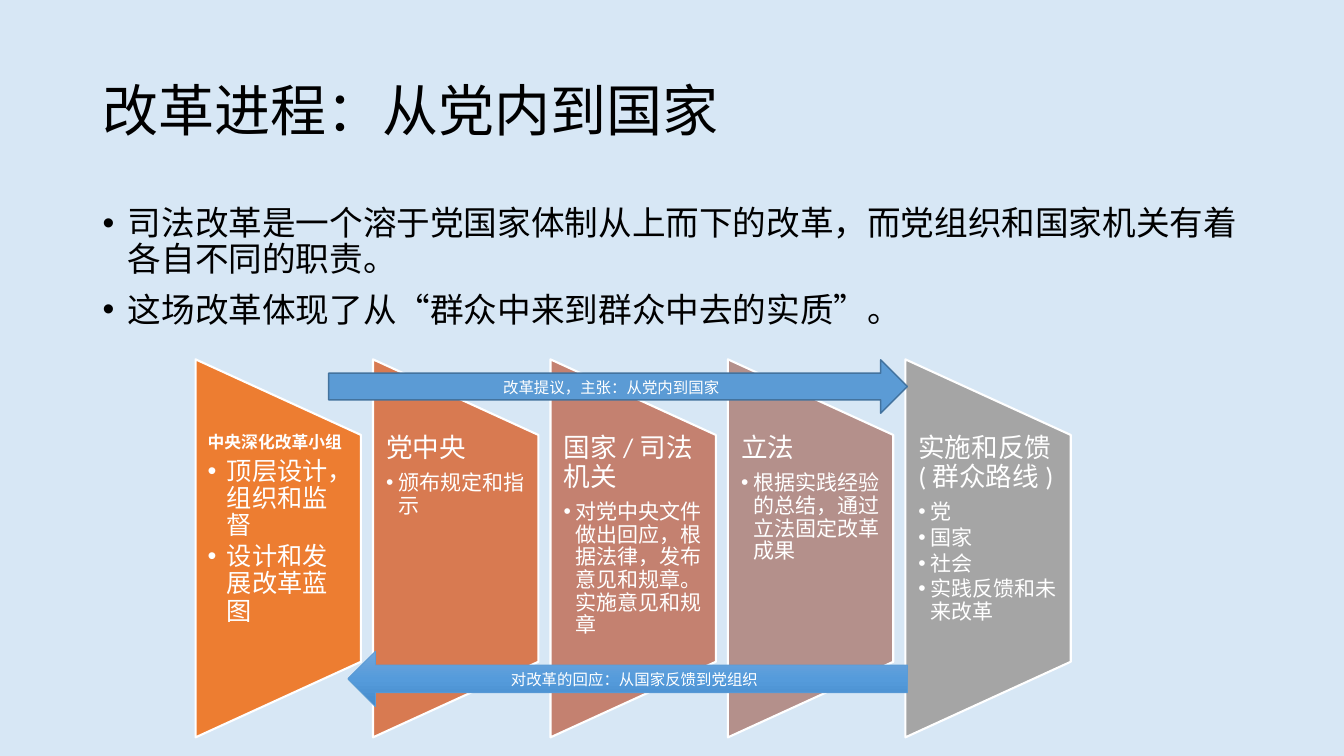
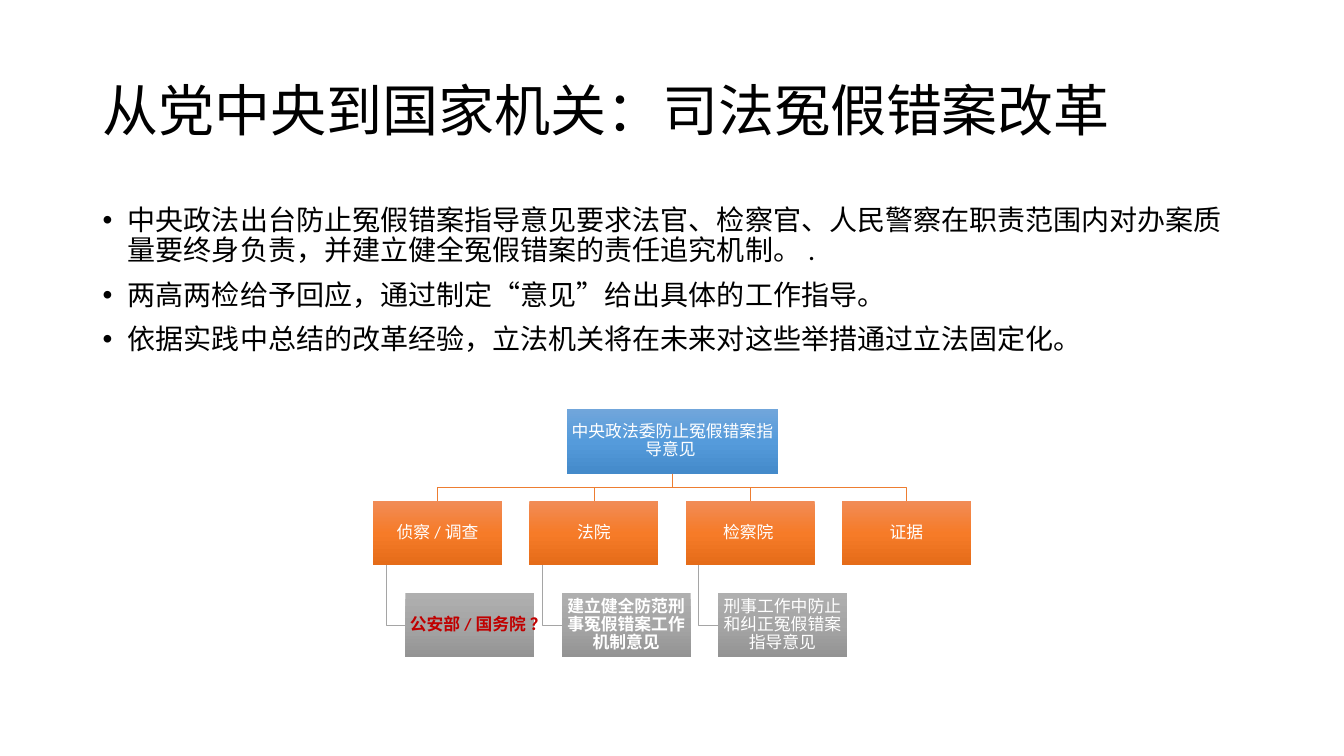
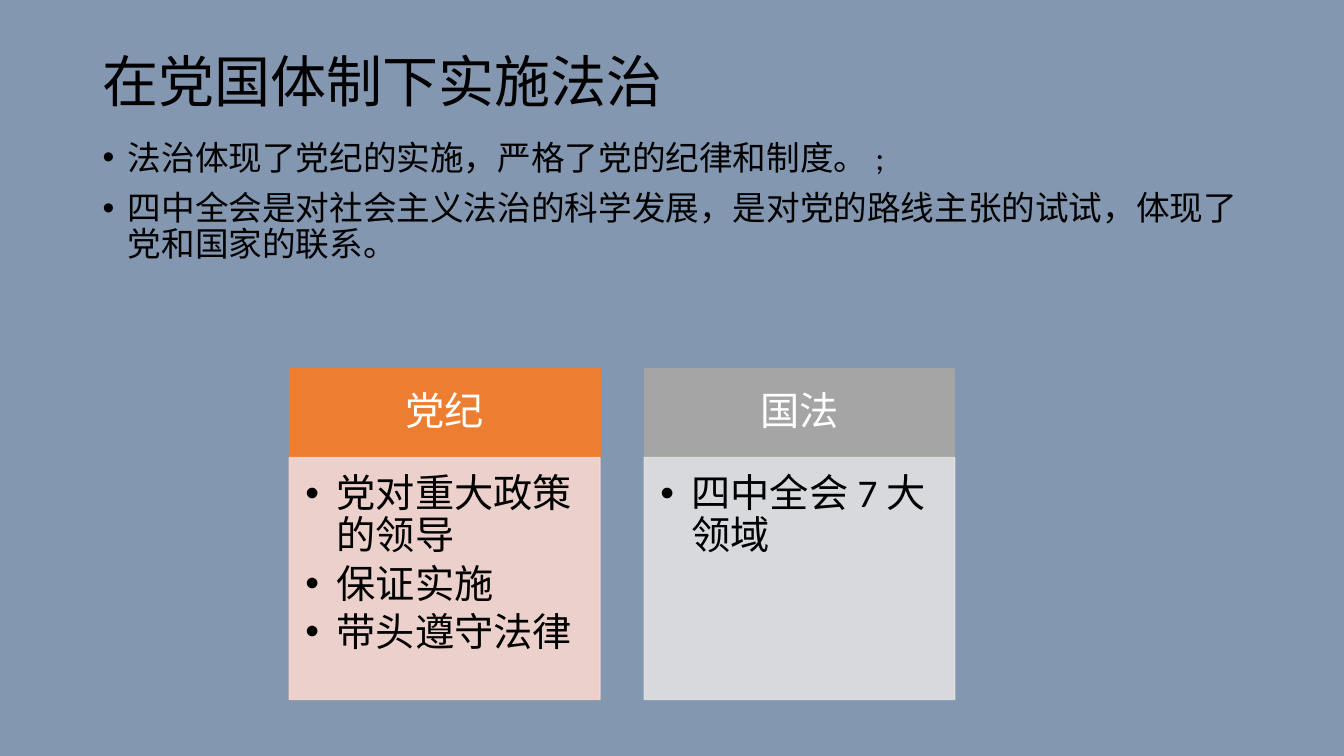
"""Build three slides on judicial reform, from Party bodies to state organs."""
from copy import deepcopy
from dataclasses import dataclass
from typing import Any, Optional, Union

from lxml import etree
from pptx import Presentation
from pptx.dml.color import RGBColor
from pptx.enum.lang import MSO_LANGUAGE_ID
from pptx.enum.shapes import MSO_SHAPE
from pptx.enum.text import MSO_ANCHOR, PP_ALIGN
from pptx.oxml.ns import qn
from pptx.util import Inches, Pt

RECT = MSO_SHAPE.RECTANGLE
TRAPEZOID = MSO_SHAPE.FLOWCHART_MANUAL_OPERATION
RIGHT_ARROW = MSO_SHAPE.RIGHT_ARROW
LEFT_ARROW = MSO_SHAPE.LEFT_ARROW
TOP, MIDDLE = MSO_ANCHOR.TOP, MSO_ANCHOR.MIDDLE
LEFT, CENTER = PP_ALIGN.LEFT, PP_ALIGN.CENTER
CHINESE = MSO_LANGUAGE_ID.SIMPLIFIED_CHINESE

Fill = Union[str, tuple[str, str, str]]
Box = tuple[float, float, float, float]


@dataclass(frozen=True)
class Theme:
    font: str = "Calibri"
    black: str = "000000"
    white: str = "FFFFFF"
    red: str = "C00000"
    sky: str = "D7E7F5"
    slate: str = "8497B0"
    blue: str = "5B9BD5"
    navy: str = "43739E"
    orange: str = "ED7D31"
    gray: str = "A5A5A5"
    peach: str = "F8D7CE"
    silver: str = "E1E1E1"
    stages: tuple[str, ...] = ("ED7D31", "D87A51", "C48170", "B4908B", "A5A5A5")
    blue_shade: Fill = ("71A6DB", "559BDB", "448ACA")
    orange_shade: Fill = ("F18C57", "F67B28", "E56C19")
    gray_shade: Fill = ("AFAFAF", "A5A5A5", "939393")
    title_size: float = 40
    body_size: float = 24
    dense_size: float = 20
    column_size: float = 28
    stage_size: float = 19
    duty_size: float = 15
    lead_size: float = 12
    lead_duty_size: float = 18
    node_size: float = 12
    arrow_size: float = 11


T = Theme()


@dataclass(frozen=True)
class Para:
    text: str
    size: float
    color: str = T.white
    bold: bool = False
    align: Any = LEFT
    indent: float = 0
    spacing: float = 0.9
    before: float = 0
    after: float = 0


@dataclass(frozen=True)
class Stage:
    heading: str
    duties: tuple[str, ...]
    size: float = T.stage_size
    duty_size: float = T.duty_size
    bold: bool = False
    indent: float = 0.12
    inset: float = 0.13


@dataclass(frozen=True)
class Branch:
    name: str
    leaf: str = ""
    color: str = T.white
    bold: bool = False


@dataclass(frozen=True)
class Column:
    heading: str
    points: tuple[str, ...]
    color: str
    tint: str


def assign(target: Any, values: dict[str, Any]) -> None:
    """Set every named attribute on the target."""
    for name, value in values.items():
        setattr(target, name, value)


def inches(values: tuple[float, ...]) -> list[int]:
    """Convert numbers to lengths in inches."""
    return [Inches(value) for value in values]


def add_bullet(paragraph: Any, indent: float) -> None:
    """Give a paragraph a round bullet with a hanging indent."""
    props = paragraph._p.get_or_add_pPr()
    props.set("marL", str(Inches(indent)))
    props.set("indent", str(-Inches(indent)))
    etree.SubElement(props, qn("a:buFont")).set("typeface", "Arial")
    etree.SubElement(props, qn("a:buChar")).set("char", "•")


def write(shape: Any, paras: list[Para], anchor: Any = TOP,
          insets: Box = (0.1, 0.05, 0.1, 0.05)) -> None:
    """Fill a shape with formatted paragraphs."""
    frame = shape.text_frame
    sides = ("margin_left", "margin_top", "margin_right", "margin_bottom")
    assign(frame, {"word_wrap": True, "vertical_anchor": anchor,
                   **dict(zip(sides, inches(insets)))})
    for index, para in enumerate(paras):
        paragraph = frame.add_paragraph() if index else frame.paragraphs[0]
        if para.indent:
            add_bullet(paragraph, para.indent)
        assign(paragraph, {"alignment": para.align, "line_spacing": para.spacing,
                           "space_before": Pt(para.before if index else 0),
                           "space_after": Pt(para.after)})
        run = paragraph.add_run()
        run.text = para.text
        assign(run.font, {"name": T.font, "size": Pt(para.size), "bold": para.bold,
                          "language_id": CHINESE})
        run.font.color.rgb = RGBColor.from_string(para.color)


def add_text(slide: Any, box: Box, paras: list[Para], anchor: Any = TOP,
             insets: Box = (0.1, 0.05, 0.1, 0.05)) -> None:
    """Add a wrapped text box."""
    write(slide.shapes.add_textbox(*inches(box)), paras, anchor, insets)


def set_line(shape: Any, color: Optional[str], width: float) -> None:
    """Outline a shape, or leave it without a line."""
    if color is None:
        shape.line.fill.background()
        return
    shape.line.color.rgb = RGBColor.from_string(color)
    shape.line.width = Pt(width)


def set_fill(shape: Any, fill: Fill) -> None:
    """Fill a shape with one colour or a vertical three-stop gradient."""
    if isinstance(fill, str):
        shape.fill.solid()
        shape.fill.fore_color.rgb = RGBColor.from_string(fill)
        return
    shape.fill.gradient()
    shape.fill.gradient_angle = 270
    stops = shape.element.spPr.find(".//" + qn("a:gsLst"))
    stops.insert(1, deepcopy(stops[0]))
    for stop, position, color in zip(shape.fill.gradient_stops, (0, 0.5, 1), fill):
        stop.position = position
        stop.color.rgb = RGBColor.from_string(color)


def add_block(slide: Any, kind: Any, box: Box, fill: Fill,
              line: Optional[str] = None, width: float = 1) -> Any:
    """Add a flat preset shape."""
    shape = slide.shapes.add_shape(kind, *inches(box))
    shape.shadow.inherit = False
    set_fill(shape, fill)
    set_line(shape, line, width)
    return shape


def set_opacity(shape: Any, percent: int) -> None:
    """Make the fill and line of a shape partly transparent."""
    for color in shape.element.spPr.iter(qn("a:srgbClr")):
        etree.SubElement(color, qn("a:alpha")).set("val", str(percent * 1000))


def add_link(slide: Any, points: list[tuple[float, float]], color: str) -> None:
    """Draw an open bent line through the points."""
    start, *rest = [tuple(inches(point)) for point in points]
    builder = slide.shapes.build_freeform(*start)
    builder.add_line_segments(rest, close=False)
    link = builder.convert_to_shape()
    link.shadow.inherit = False
    link.fill.background()
    set_line(link, color, 0.5)


def add_slide(deck: Any, background: str, title: str, points: list[str],
              size: float = T.body_size, title_top: float = 0.4,
              body_top: float = 2, body_height: float = 4.76) -> Any:
    """Add a slide with its background, title and bulleted body."""
    slide = deck.slides.add_slide(deck.slide_layouts[6])
    slide.background.fill.solid()
    slide.background.fill.fore_color.rgb = RGBColor.from_string(background)
    add_text(slide, (0.92, title_top, 11.5, 1.45),
             [Para(title, T.title_size, T.black)], MIDDLE)
    add_text(slide, (0.92, body_top, 11.5, body_height),
             [Para(point, size, T.black, indent=0.25, before=10) for point in points])
    return slide


def add_stage(slide: Any, left: float, stage: Stage, color: str) -> None:
    """Draw one step of the reform process."""
    width, length = 1.64, 3.75
    panel = add_block(slide, TRAPEZOID, (left + (width - length) / 2, 4.62, length, width),
                      color, T.white, 1.5)
    panel.rotation = 270
    heading = Para(stage.heading, stage.size, bold=stage.bold, after=stage.size * 0.35)
    duties = [Para(duty, stage.duty_size, indent=stage.indent, after=stage.duty_size * 0.15)
              for duty in stage.duties]
    add_text(slide, (left, 4.31, width, 2.25), [heading, *duties],
             insets=(stage.inset, 0, stage.inset, 0))


def build_process(deck: Any) -> None:
    """Build the slide on the reform process."""
    slide = add_slide(deck, T.sky, "改革进程：从党内到国家", [
        "司法改革是一个溶于党国家体制从上而下的改革，而党组织和国家机关有着各自不同的职责。",
        "这场改革体现了从“群众中来到群众中去的实质”。",
    ])
    stages = [
        Stage("中央深化改革小组", ("顶层设计，组织和监督", "设计和发展改革蓝图"),
              T.lead_size, T.lead_duty_size, True, 0.19, 0.12),
        Stage("党中央", ("颁布规定和指示",)),
        Stage("国家/司法机关", ("对党中央文件做出回应，根据法律，发布意见和规章。实施意见和规章",)),
        Stage("立法", ("根据实践经验的总结，通过立法固定改革成果",)),
        Stage("实施和反馈(群众路线)", ("党", "国家", "社会", "实践反馈和未来改革")),
    ]
    for index, (stage, color) in enumerate(zip(stages, T.stages)):
        add_stage(slide, 1.94 + 1.76 * index, stage, color)
    proposal = add_block(slide, RIGHT_ARROW, (3.26, 3.57, 5.74, 0.53), T.blue, T.navy)
    response = add_block(slide, LEFT_ARROW, (3.45, 6.46, 5.55, 0.55), T.blue_shade, T.blue, 0.5)
    for arrow, label in ((proposal, "改革提议，主张：从党内到国家"),
                         (response, "对改革的回应：从国家反馈到党组织")):
        write(arrow, [Para(label, T.arrow_size, align=CENTER, spacing=1.07)], MIDDLE)


def add_node(slide: Any, box: Box, fill: Fill, text: str,
             color: str = T.white, bold: bool = False) -> None:
    """Draw one box of the organisation tree."""
    write(add_block(slide, RECT, box, fill),
          [Para(text, T.node_size, color, bold, CENTER)], MIDDLE, (0.01,) * 4)


def build_tree(deck: Any) -> None:
    """Build the slide on wrongful-case reform."""
    slide = add_slide(deck, T.white, "从党中央到国家机关：司法冤假错案改革", [
        "中央政法出台防止冤假错案指导意见要求法官、检察官、人民警察在职责范围内对办案质量要终身负责，并建立健全冤假错案的责任追究机制。.",
        "两高两检给予回应，通过制定“意见”给出具体的工作指导。",
        "依据实践中总结的改革经验，立法机关将在未来对这些举措通过立法固定化。",
    ], T.dense_size)
    branches = [
        Branch("侦察/调查", "公安部/国务院 ？", T.red, True),
        Branch("法院", "建立健全防范刑事冤假错案工作机制意见", bold=True),
        Branch("检察院 ", "刑事工作中防止和纠正冤假错案指导意见"),
        Branch("证据"),
    ]
    width, height, trunk = 1.28, 0.64, 6.67
    root_top, branch_top, leaf_top = 4.06, 4.97, 5.88
    root_bottom, fork = root_top + height, 4.84
    add_node(slide, (5.62, root_top, 2.1, height), T.blue_shade, "中央政法委防止冤假错案指导意见 ")
    for index, branch in enumerate(branches):
        left = 3.7 + 1.55 * index
        center, stem, leaf_left = left + width / 2, left + 0.13, left + 0.32
        leaf_middle = leaf_top + height / 2
        add_link(slide, [(trunk, root_bottom), (trunk, fork), (center, fork),
                         (center, branch_top)], T.orange)
        add_node(slide, (left, branch_top, width, height), T.orange_shade, branch.name)
        if branch.leaf:
            add_link(slide, [(stem, branch_top + height), (stem, leaf_middle),
                             (leaf_left, leaf_middle)], T.gray)
            add_node(slide, (leaf_left, leaf_top, width, height), T.gray_shade,
                     branch.leaf, branch.color, branch.bold)


def build_rule_of_law(deck: Any) -> None:
    """Build the slide comparing Party discipline and state law."""
    slide = add_slide(deck, T.slate, "在党国体制下实施法治", [
        "法治体现了党纪的实施，严格了党的纪律和制度。;",
        "四中全会是对社会主义法治的科学发展，是对党的路线主张的试试，体现了党和国家的联系。",
    ], title_top=0.11, body_top=1.35, body_height=6.15)
    columns = [
        Column("党纪", ("党对重大政策的领导", "保证实施", "带头遵守法律"), T.orange, T.peach),
        Column("国法", ("四中全会7大领域",), T.gray, T.silver),
    ]
    for index, column in enumerate(columns):
        left = 2.87 + 3.52 * index
        header = add_block(slide, RECT, (left, 3.66, 3.08, 0.88), column.color, column.color)
        write(header, [Para(column.heading, T.column_size, align=CENTER)],
              MIDDLE, (0.22, 0.12, 0.22, 0.12))
        panel = add_block(slide, RECT, (left, 4.54, 3.08, 2.4), column.tint, column.tint)
        set_opacity(panel, 90)
        write(panel, [Para(point, T.column_size, T.black, indent=0.31,
                           after=T.column_size * 0.15) for point in column.points],
              insets=(0.16, 0.16, 0.22, 0.24))


def main() -> None:
    """Build and save the presentation."""
    deck = Presentation()
    assign(deck, {"slide_width": Inches(13.33), "slide_height": Inches(7.5)})
    for build in (build_process, build_tree, build_rule_of_law):
        build(deck)
    deck.save("out.pptx")


if __name__ == "__main__":
    main()
